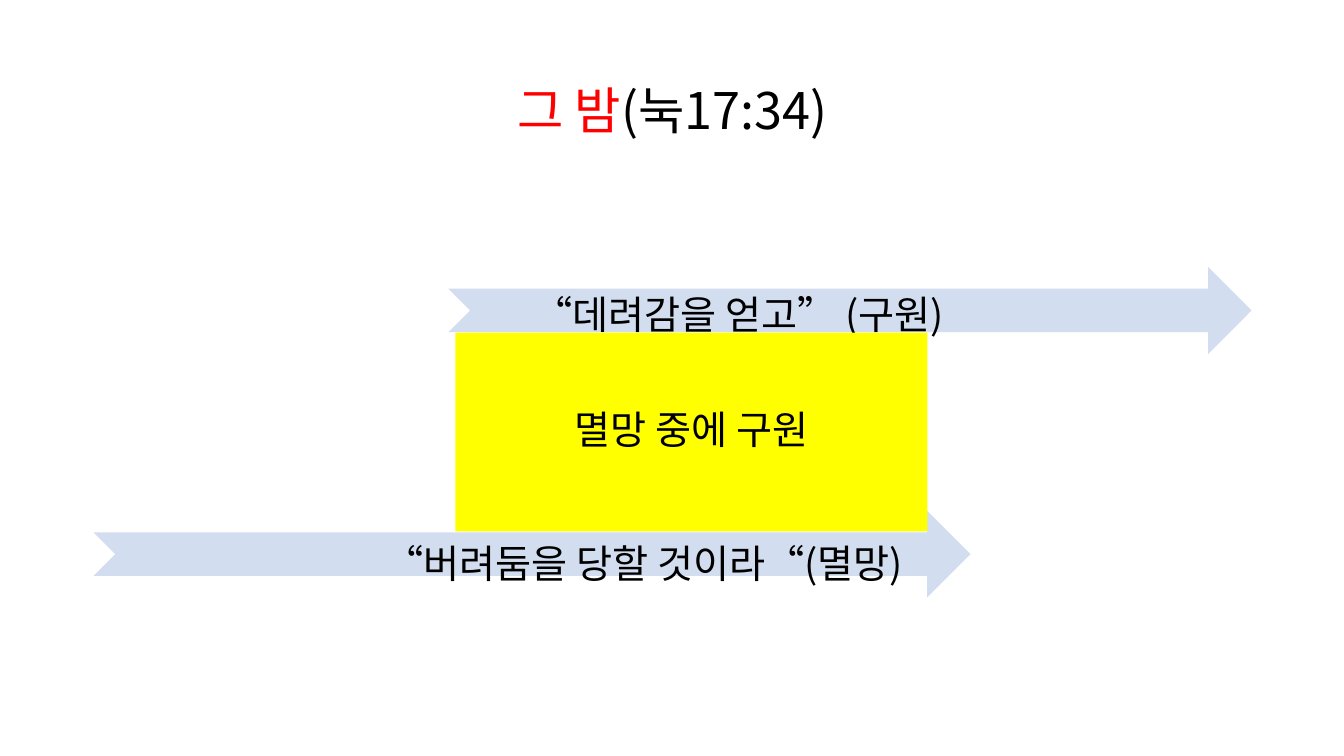
from lxml.etree import SubElement
from pptx import Presentation
from pptx.dml.color import RGBColor
from pptx.enum.shapes import MSO_SHAPE as Shape
from pptx.enum.text import MSO_ANCHOR as Anchor, PP_ALIGN as Align
from pptx.oxml.ns import qn
from pptx.util import Cm, Pt

FONT = "Noto Sans CJK KR"
BLACK, RED, YELLOW, PALE_BLUE = "000000", "FF0000", "FFFF00", "D2DEEF"

# Places are left, top, width, height in centimetres.
TITLE = [("그 밤", RED), ("(눅17:34)", BLACK)]
TITLE_PLACE = (2.34, 1.02, 29.21, 3.68)
ARROWS = [
    # arrow place, label place, label
    ((11.3, 6.73, 20.24, 2.19), (11.3, 6.86, 14.63, 2.19), "“데려감을 얻고” (구원)"),
    ((2.36, 12.87, 22.1, 2.19), (7.98, 12.98, 16.48, 2.34), "“버려둠을 당할 것이라“(멸망)"),
]
CENTRE_PLACE = (11.48, 8.38, 11.89, 5.01)
CENTRE_TEXT = "멸망 중에 구원"


def colour(value):
    return RGBColor.from_string(value)


def add_filled(page, kind, place, fill):
    shape = page.shapes.add_shape(kind, *map(Cm, place))
    shape.shadow.inherit = False
    shape.fill.solid()
    shape.fill.fore_color.rgb = colour(fill)
    shape.line.fill.background()
    return shape


def write(box, spans, size, anchor=Anchor.MIDDLE, inset=None):
    """Fill a box with one centred paragraph of (text, colour) spans."""
    frame = box.text_frame
    frame.word_wrap = True
    frame.vertical_anchor = anchor
    if inset is not None:
        frame.margin_left = frame.margin_right = Cm(inset)
        frame.margin_top = frame.margin_bottom = Cm(inset)
    para = frame.paragraphs[0]
    para.alignment = Align.CENTER
    para.line_spacing = 0.9
    for text, ink in spans:
        span = para.add_run()
        span.text = text
        span.font.size = Pt(size)
        span.font.name = FONT
        span.font.color.rgb = colour(ink)
        SubElement(span.font._element, qn("a:ea"), typeface=FONT)


def main():
    deck = Presentation()
    deck.slide_width, deck.slide_height = Cm(33.87), Cm(19.05)
    page = deck.slides.add_slide(deck.slide_layouts[6])

    write(page.shapes.add_textbox(*map(Cm, TITLE_PLACE)), TITLE, 36)
    for arrow_place, label_place, label in ARROWS:
        add_filled(page, Shape.NOTCHED_RIGHT_ARROW, arrow_place, PALE_BLUE)
        label_box = page.shapes.add_textbox(*map(Cm, label_place))
        write(label_box, [(label, BLACK)], 28, Anchor.BOTTOM, 0.56)
    centre = add_filled(page, Shape.RECTANGLE, CENTRE_PLACE, YELLOW)
    write(centre, [(CENTRE_TEXT, BLACK)], 28)

    deck.save("out.pptx")


if __name__ == "__main__":
    main()
